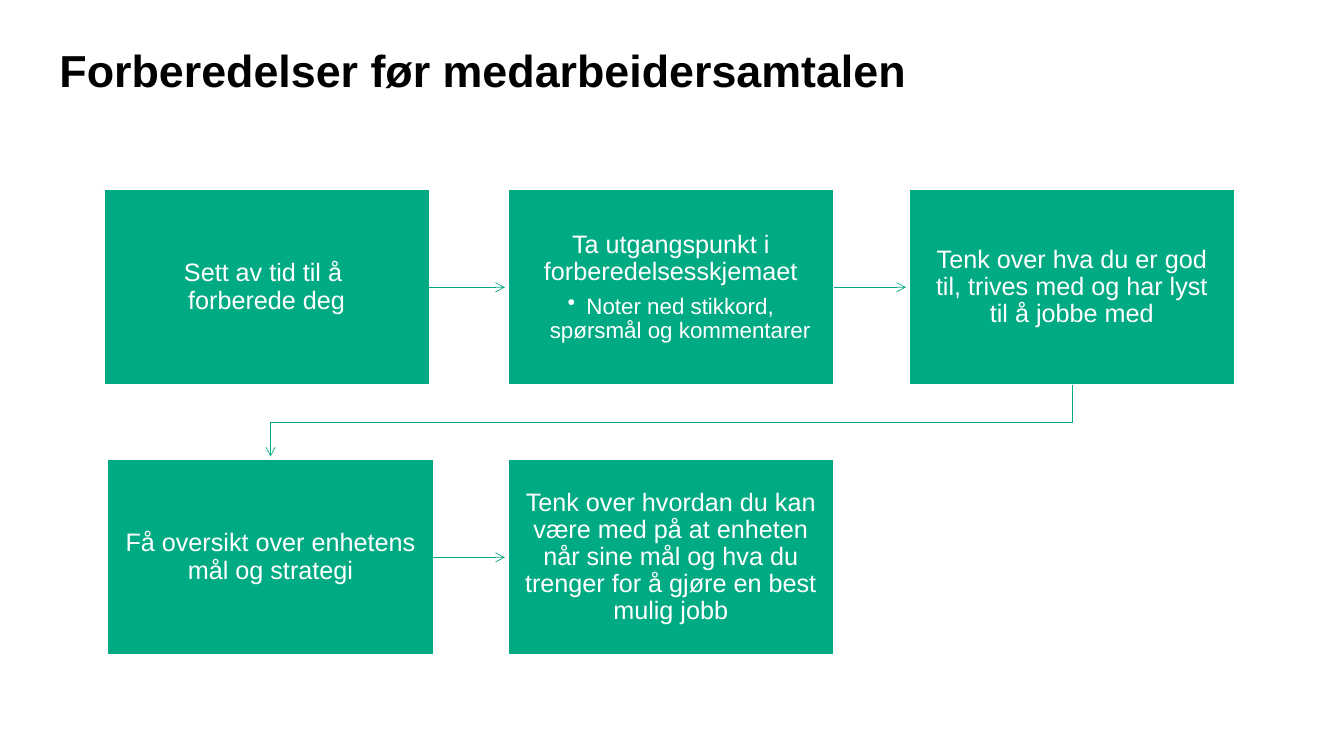
from dataclasses import dataclass

from lxml.etree import SubElement
from pptx import Presentation
from pptx.dml.color import RGBColor
from pptx.enum.shapes import MSO_CONNECTOR, MSO_SHAPE
from pptx.enum.text import MSO_ANCHOR, PP_ALIGN
from pptx.oxml.ns import qn
from pptx.util import Pt


@dataclass(frozen=True)
class Theme:
    font: str = "Arial"
    green: RGBColor = RGBColor(0x00, 0xAB, 0x84)
    white: RGBColor = RGBColor(0xFF, 0xFF, 0xFF)
    black: RGBColor = RGBColor(0x00, 0x00, 0x00)
    title_size: float = 32
    step_size: float = 18
    detail_size: float = 16
    line_spacing: float = 0.9


THEME = Theme()
STEP_WIDTH, STEP_HEIGHT = 232.5, 139.6
TOP_ROW, BOTTOM_ROW = 135.4, 328.3
TIP_GAP = 2.2
STEPS = [
    (74.2, TOP_ROW, "Sett av tid til å \nforberede deg", None),
    (362.9, TOP_ROW, "Ta utgangspunkt i forberedelsesskjemaet",
     "Noter ned stikkord, spørsmål og kommentarer"),
    (649.4, TOP_ROW, "Tenk over hva du er god til, trives med og har lyst til å jobbe med", None),
    (77, BOTTOM_ROW, "Få oversikt over enhetens mål og strategi", None),
    (362.9, BOTTOM_ROW,
     "Tenk over hvordan du kan være med på at enheten når sine mål "
     "og hva du trenger for å gjøre en best mulig jobb", None),
]


def format_paragraph(paragraph, size, color, bold=False):
    paragraph.line_spacing = THEME.line_spacing
    for run in paragraph.runs:
        run.font.name = THEME.font
        run.font.size = Pt(size)
        run.font.bold = bold
        run.font.color.rgb = color


def set_margins(frame, horizontal, vertical):
    frame.margin_left = frame.margin_right = Pt(horizontal)
    frame.margin_top = frame.margin_bottom = Pt(vertical)


def add_title(slide, left, top, width, height):
    title = slide.shapes.title
    title.left, title.top = Pt(left), Pt(top)
    title.width, title.height = Pt(width), Pt(height)
    frame = title.text_frame
    frame.text = "Forberedelser før medarbeidersamtalen"
    frame.vertical_anchor = MSO_ANCHOR.TOP
    set_margins(frame, 0, 0)
    heading = frame.paragraphs[0]
    heading.alignment = PP_ALIGN.LEFT
    format_paragraph(heading, THEME.title_size, THEME.black, bold=True)


def add_detail(frame, detail):
    bullet = frame.add_paragraph()
    bullet.text = detail
    bullet.level = 1
    bullet.alignment = PP_ALIGN.CENTER
    properties = bullet._p.get_or_add_pPr()
    properties.set("marL", str(Pt(13.5)))
    properties.set("indent", str(Pt(-13.5)))
    SubElement(properties, qn("a:buChar")).set("char", "•")
    format_paragraph(bullet, THEME.detail_size, THEME.white)


def add_step(slide, left, top, statement, detail):
    step = slide.shapes.add_shape(
        MSO_SHAPE.RECTANGLE, Pt(left), Pt(top), Pt(STEP_WIDTH), Pt(STEP_HEIGHT))
    step.shadow.inherit = False
    step.fill.solid()
    step.fill.fore_color.rgb = THEME.green
    step.line.color.rgb = THEME.white
    step.line.width = Pt(1)
    frame = step.text_frame
    frame.word_wrap = True
    frame.vertical_anchor = MSO_ANCHOR.MIDDLE
    set_margins(frame, 11.5, 12)
    lead = frame.paragraphs[0]
    lead.text = statement
    lead.alignment = PP_ALIGN.CENTER
    format_paragraph(lead, THEME.step_size, THEME.white)
    if detail:
        lead.space_after = Pt(6.3)
        add_detail(frame, detail)


def style_arrow(arrow):
    arrow.line.color.rgb = THEME.green
    arrow.line.width = Pt(0.5)
    SubElement(arrow.line._get_or_add_ln(), qn("a:tailEnd")).set("type", "arrow")


def add_row_arrow(slide, start, end, top):
    middle = Pt(top + STEP_HEIGHT / 2)
    arrow = slide.shapes.add_connector(
        MSO_CONNECTOR.STRAIGHT, Pt(start + STEP_WIDTH), middle, Pt(end - TIP_GAP), middle)
    style_arrow(arrow)
    SubElement(arrow._element.spPr, qn("a:effectLst"))


def add_return_arrow(slide, start, start_top, end, end_top):
    start_x, end_x = (Pt(left + STEP_WIDTH / 2) for left in (start, end))
    start_y = start_top + STEP_HEIGHT
    turn_y = Pt((start_y + end_top) / 2)
    outline = slide.shapes.build_freeform(start_x, Pt(start_y))
    outline.add_line_segments(
        [(start_x, turn_y), (end_x, turn_y), (end_x, Pt(end_top - TIP_GAP))], close=False)
    arrow = outline.convert_to_shape()
    arrow.shadow.inherit = False
    arrow.fill.background()
    style_arrow(arrow)


def add_process(slide):
    for step in STEPS:
        add_step(slide, *step)
    for (start, start_top, *_), (end, end_top, *_) in zip(STEPS, STEPS[1:]):
        if start_top == end_top:
            add_row_arrow(slide, start, end, start_top)
        else:
            add_return_arrow(slide, start, start_top, end, end_top)


def main():
    presentation = Presentation()
    presentation.slide_width, presentation.slide_height = Pt(960), Pt(540)
    slide = presentation.slides.add_slide(presentation.slide_layouts[5])
    add_title(slide, 42.5, 34.5, 874, 55.5)
    add_process(slide)
    presentation.save("out.pptx")


if __name__ == "__main__":
    main()
